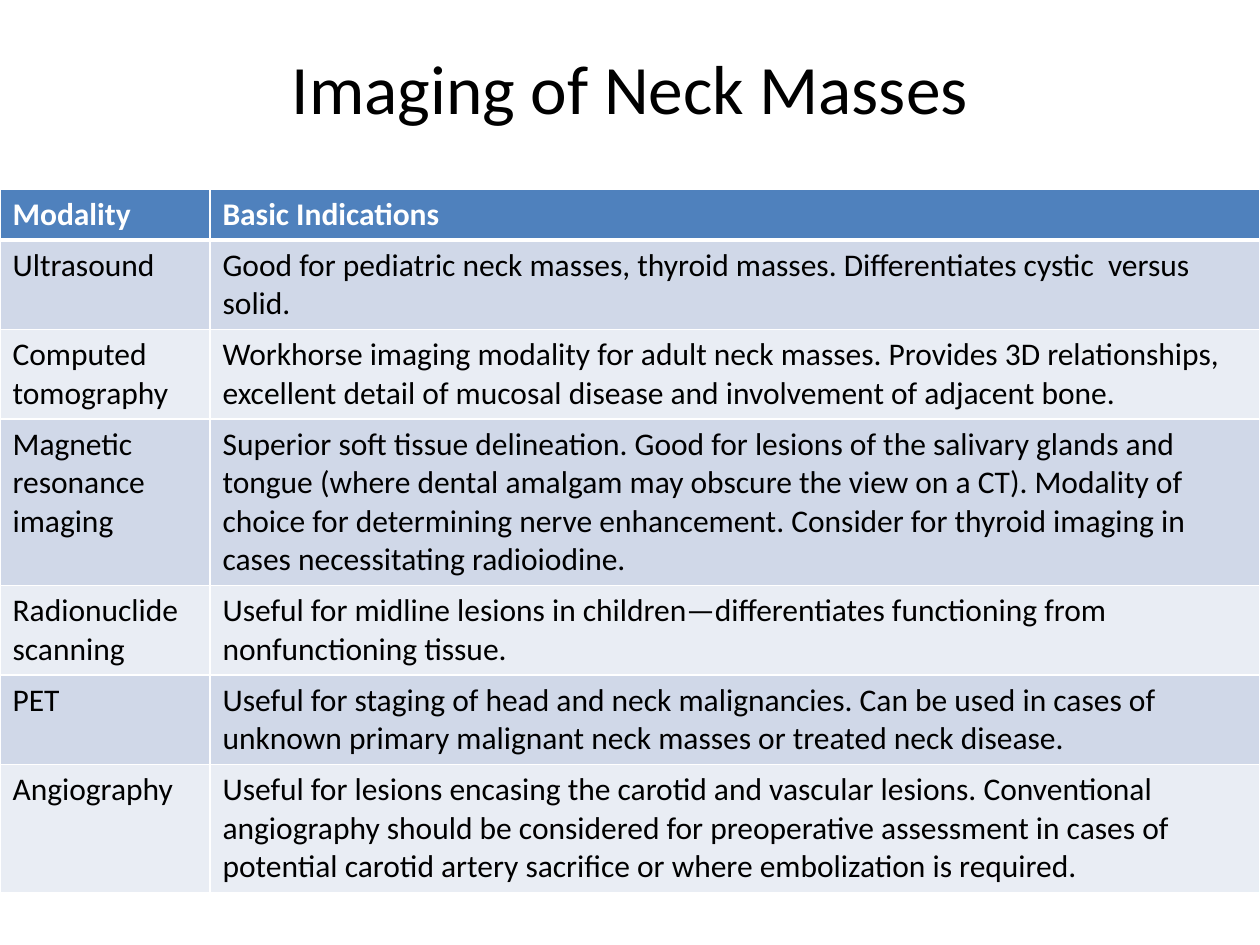
from dataclasses import dataclass

from lxml import etree
from pptx import Presentation
from pptx.dml.color import RGBColor
from pptx.enum.text import MSO_ANCHOR, MSO_AUTO_SIZE, PP_ALIGN
from pptx.oxml.ns import qn
from pptx.util import Emu, Pt

PIXELS_PER_INCH = 126
MIDDLE = MSO_ANCHOR.MIDDLE
NO_AUTOFIT = MSO_AUTO_SIZE.NONE
CENTER = PP_ALIGN.CENTER

BLACK = RGBColor(0x00, 0x00, 0x00)
WHITE = RGBColor(0xFF, 0xFF, 0xFF)
HEADER_BLUE = RGBColor(0x4F, 0x81, 0xBD)
BAND_COLORS = (RGBColor(0xD0, 0xD8, 0xE8), RGBColor(0xE9, 0xED, 0xF4))

FONT_NAME = "Calibri"
TABLE_TOP = 189
COLUMN_WIDTHS = (210, 1050)
THIN, THICK = Pt(1), Pt(3)


@dataclass(frozen=True)
class ModalityRow:
    modality: str
    indications: str
    height: int


ROWS = (
    ModalityRow("Modality", "Basic Indications", 51),
    ModalityRow(
        "Ultrasound",
        "Good for pediatric neck masses, thyroid masses. Differentiates cystic  versus solid.",
        89,
    ),
    ModalityRow(
        "Computed tomography",
        "Workhorse imaging modality for adult neck masses. Provides 3D relationships, "
        "excellent detail of mucosal disease and involvement of adjacent bone.",
        89,
    ),
    ModalityRow(
        "Magnetic resonance\nimaging",
        "Superior soft tissue delineation. Good for lesions of the salivary glands and "
        "tongue (where dental amalgam may obscure the view on a CT). Modality of choice "
        "for determining nerve enhancement. Consider for thyroid imaging in cases "
        "necessitating radioiodine.",
        166,
    ),
    ModalityRow(
        "Radionuclide scanning",
        "Useful for midline lesions in children—differentiates functioning from "
        "nonfunctioning tissue.",
        89,
    ),
    ModalityRow(
        "PET",
        "Useful for staging of head and neck malignancies. Can be used in cases of "
        "unknown primary malignant neck masses or treated neck disease.",
        89,
    ),
    ModalityRow(
        "Angiography",
        "Useful for lesions encasing the carotid and vascular lesions. Conventional "
        "angiography should be considered for preoperative assessment in cases of "
        "potential carotid artery sacrifice or where embolization is required.",
        128,
    ),
)


def px(length: int) -> Emu:
    return Emu(round(length * 914400 / PIXELS_PER_INCH))


def set_attributes(target, values: dict) -> None:
    for name, value in values.items():
        setattr(target, name, value)


def format_font(font, size: float, color: RGBColor, bold: bool = False) -> None:
    set_attributes(font, {"name": FONT_NAME, "size": Pt(size), "bold": bold})
    font.color.rgb = color


def set_borders(cell, top: int, bottom: int) -> None:
    """Draw white cell borders; the sides are thin."""
    properties = cell._tc.get_or_add_tcPr()
    widths = {"a:lnL": THIN, "a:lnR": THIN, "a:lnT": top, "a:lnB": bottom}
    for index, (tag, width) in enumerate(widths.items()):
        line = etree.Element(qn(tag), w=str(int(width)))
        fill = etree.SubElement(line, qn("a:solidFill"))
        etree.SubElement(fill, qn("a:srgbClr"), val=str(WHITE))
        properties.insert(index, line)


def add_title(slide, text: str) -> None:
    title = slide.shapes.title
    set_attributes(
        title, {"left": px(63), "top": px(38), "width": px(1134), "height": px(98)}
    )
    frame = title.text_frame
    frame.text = text
    set_attributes(
        frame,
        {"vertical_anchor": MIDDLE, "auto_size": NO_AUTOFIT, "word_wrap": True},
    )
    paragraph = frame.paragraphs[0]
    paragraph.alignment = CENTER
    format_font(paragraph.runs[0].font, 39.6, BLACK)


def fill_cell(cell, text: str, row_index: int) -> None:
    is_header = row_index == 0
    cell.text = text
    cell.fill.solid()
    cell.fill.fore_color.rgb = (
        HEADER_BLUE if is_header else BAND_COLORS[(row_index - 1) % 2]
    )
    for paragraph in cell.text_frame.paragraphs:
        for run in paragraph.runs:
            format_font(run.font, 18, WHITE if is_header else BLACK, is_header)
    set_borders(
        cell,
        top=THICK if row_index == 1 else THIN,
        bottom=THICK if is_header else THIN,
    )


def add_modality_table(slide, rows: tuple[ModalityRow, ...]) -> None:
    table = slide.shapes.add_table(
        len(rows),
        len(COLUMN_WIDTHS),
        px(0),
        px(TABLE_TOP),
        px(sum(COLUMN_WIDTHS)),
        px(sum(row.height for row in rows)),
    ).table
    for column, width in zip(table.columns, COLUMN_WIDTHS):
        column.width = px(width)
    for row_index, row in enumerate(rows):
        table.rows[row_index].height = px(row.height)
        for column_index, text in enumerate((row.modality, row.indications)):
            fill_cell(table.cell(row_index, column_index), text, row_index)


def main() -> None:
    presentation = Presentation()
    set_attributes(
        presentation, {"slide_width": px(1260), "slide_height": px(945)}
    )
    title_only = presentation.slide_layouts.get_by_name("Title Only")
    slide = presentation.slides.add_slide(title_only)
    add_title(slide, "Imaging of Neck Masses")
    add_modality_table(slide, ROWS)
    presentation.save("out.pptx")


if __name__ == "__main__":
    main()
